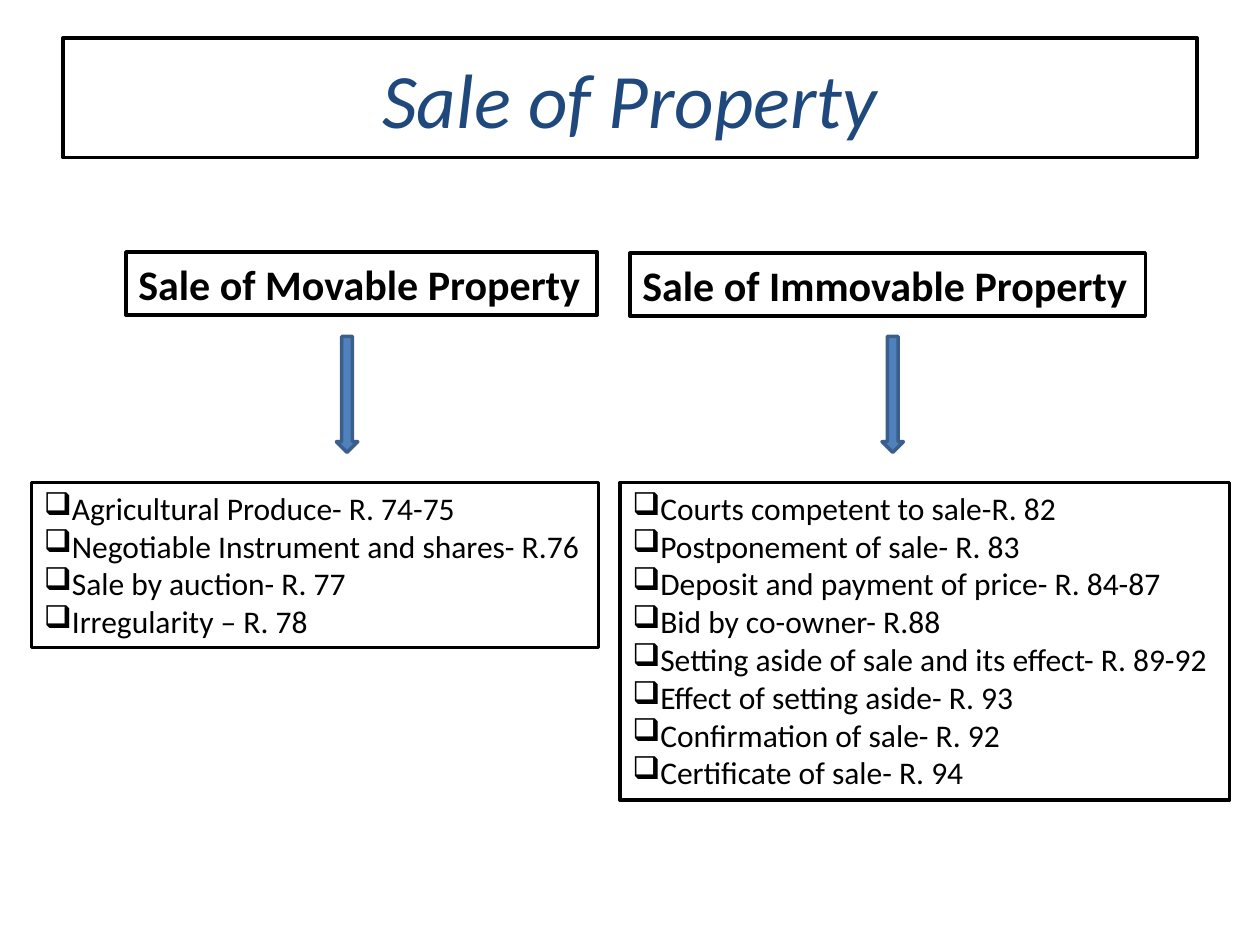
from lxml.etree import SubElement
from pptx import Presentation
from pptx.dml.color import RGBColor
from pptx.enum.shapes import MSO_SHAPE
from pptx.enum.text import MSO_ANCHOR, MSO_AUTO_SIZE, PP_ALIGN
from pptx.oxml.ns import qn
from pptx.util import Inches, Pt

BLACK, WHITE, NAVY = "000000", "FFFFFF", "1F497D"
BLUE, DARK_BLUE = "4F81BD", "3A5F8C"

MOVABLE_RULES = [
    "Agricultural Produce- R. 74-75",
    "Negotiable Instrument and shares- R.76",
    "Sale by auction- R. 77",
    "Irregularity – R. 78",
]
IMMOVABLE_RULES = [
    "Courts competent to sale-R. 82",
    "Postponement of sale- R. 83",
    "Deposit and payment of price- R. 84-87",
    "Bid by co-owner- R.88",
    "Setting aside of sale and its effect- R. 89-92",
    "Effect of setting aside- R. 93",
    "Confirmation of sale- R. 92",
    "Certificate of sale- R. 94",
]


def color(value):
    """Turn a hex string into a colour."""
    return RGBColor.from_string(value)


def paint(shape, fill=WHITE, line=BLACK):
    """Give a shape a solid fill and a two-point outline."""
    shape.fill.solid()
    shape.fill.fore_color.rgb = color(fill)
    shape.line.color.rgb = color(line)
    shape.line.width = Pt(2)


def format_text(shape, size, font_color=BLACK, bold=False, italic=False):
    """Format every run of a shape."""
    for paragraph in shape.text_frame.paragraphs:
        for run in paragraph.runs:
            run.font.name = "Calibri"
            run.font.size = Pt(size)
            run.font.bold = bold
            run.font.italic = italic
            run.font.color.rgb = color(font_color)


def set_title(slide, text):
    """Place and format the framed title."""
    title = slide.shapes.title
    title.left, title.top = Inches(0.5), Inches(0.3)
    title.width, title.height = Inches(9), Inches(0.95)
    title.text_frame.text = text
    title.text_frame.vertical_anchor = MSO_ANCHOR.MIDDLE
    title.text_frame.paragraphs[0].alignment = PP_ALIGN.CENTER
    paint(title)
    format_text(title, 44, NAVY, italic=True)


def add_box(slide, left, top, width, height, lines, size, bold=False):
    """Add a framed text box that holds one paragraph per line."""
    box = slide.shapes.add_textbox(
        Inches(left), Inches(top), Inches(width), Inches(height))
    box.text_frame.text = "\n".join(lines)
    box.text_frame.word_wrap = False
    box.text_frame.auto_size = MSO_AUTO_SIZE.SHAPE_TO_FIT_TEXT
    paint(box)
    format_text(box, size, bold=bold)
    return box


def add_bullets(box):
    """Put a square bullet before each paragraph."""
    for paragraph in box.text_frame.paragraphs:
        properties = paragraph._p.get_or_add_pPr()
        SubElement(properties, qn("a:buChar")).set("char", "❑")


def add_down_arrow(slide, left):
    """Add an arrow from a heading down to its list."""
    arrow = slide.shapes.add_shape(
        MSO_SHAPE.DOWN_ARROW, Inches(left), Inches(2.67), Inches(0.17), Inches(0.92))
    arrow.shadow.inherit = False
    paint(arrow, BLUE, DARK_BLUE)


def main():
    """Build the slide and save it."""
    presentation = Presentation()
    presentation.slide_width, presentation.slide_height = Inches(10), Inches(7.5)
    slide = presentation.slides.add_slide(presentation.slide_layouts[5])
    set_title(slide, "Sale of Property")
    add_box(slide, 1, 2, 3.74, 0.5, ["Sale of Movable Property"], 24, bold=True)
    add_box(slide, 5, 2.01, 4.09, 0.5, ["Sale of Immovable Property"], 24, bold=True)
    for left in (2.67, 7):
        add_down_arrow(slide, left)
    add_bullets(add_box(slide, 0.25, 3.83, 4.5, 1.31, MOVABLE_RULES, 18))
    add_bullets(add_box(slide, 4.92, 3.83, 4.84, 2.52, IMMOVABLE_RULES, 18))
    presentation.save("out.pptx")


if __name__ == "__main__":
    main()
